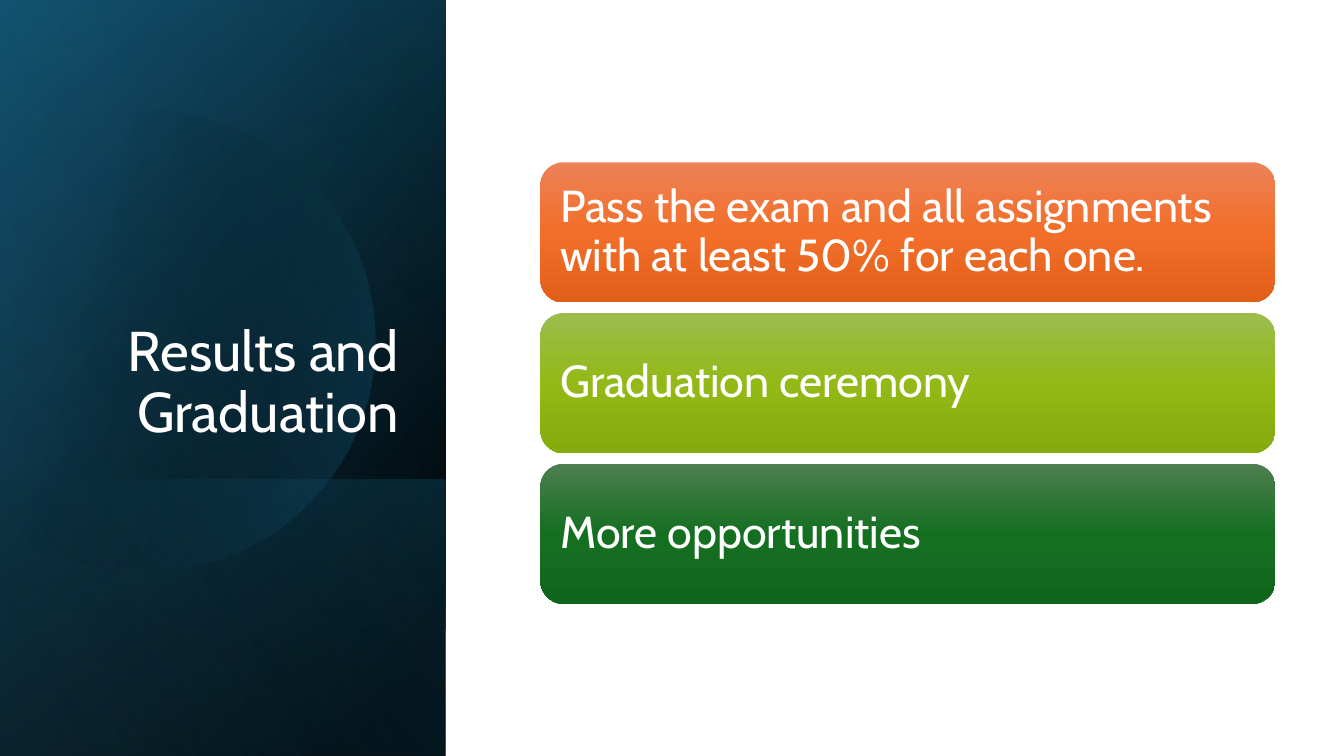
from lxml.etree import SubElement
from pptx import Presentation
from pptx.dml.color import RGBColor
from pptx.enum.shapes import MSO_SHAPE
from pptx.enum.text import MSO_ANCHOR, MSO_AUTO_SIZE, PP_ALIGN
from pptx.oxml.ns import qn
from pptx.util import Inches, Pt


def color(value):
    return RGBColor.from_string(value)


def write_text(frame, text, size=32, fill="FFFFFF", font="Cabin",
               align=PP_ALIGN.LEFT, anchor=MSO_ANCHOR.MIDDLE):
    frame.word_wrap = True
    frame.auto_size = MSO_AUTO_SIZE.NONE
    frame.vertical_anchor = anchor
    para = frame.paragraphs[0]
    para.alignment = align
    para.line_spacing = 0.9
    span = para.add_run()
    span.text = text
    span.font.name = font
    span.font.size = Pt(size)
    span.font.color.rgb = color(fill)


def curve_points(start, first, second, end, steps=24):
    """Points along a cubic curve, without its start."""
    for step in range(1, steps + 1):
        t = step / steps
        weights = ((1 - t) ** 3, 3 * t * (1 - t) ** 2, 3 * t * t * (1 - t), t ** 3)
        yield tuple(sum(weight * point[axis] for weight, point
                        in zip(weights, (start, first, second, end)))
                    for axis in (0, 1))


class SlideBuilder:
    def __init__(self, page):
        self.page = page
        self.shapes = page.shapes

    def paint(self, shape, stops, angle):
        """Gradient fill from (position, colour, opacity) in percent."""
        shape.shadow.inherit = False
        shape.line.fill.background()
        shape.fill.gradient()
        gradient = shape._element.spPr.find(qn("a:gradFill"))
        stop_list = gradient.find(qn("a:gsLst"))
        for old_stop in list(stop_list):
            stop_list.remove(old_stop)
        for position, value, opacity in stops:
            stop = SubElement(stop_list, qn("a:gs"), pos=str(position * 1000))
            tone = SubElement(stop, qn("a:srgbClr"), val=value)
            if opacity < 100:
                SubElement(tone, qn("a:alpha"), val=str(opacity * 1000))
        gradient.find(qn("a:lin")).set("ang", str(angle * 60000))

    def panel(self, top, height, stops, angle):
        """Side panel: a mirrored rectangle turned a quarter."""
        left = (PANEL_WIDTH - height) / 2
        turned_top = top + (height - PANEL_WIDTH) / 2
        panel = self.shapes.add_shape(
            MSO_SHAPE.RECTANGLE, Inches(left), Inches(turned_top),
            Inches(height), Inches(PANEL_WIDTH))
        panel.rotation = 90
        panel._element.spPr.find(qn("a:xfrm")).set("flipH", "1")
        self.paint(panel, stops, angle)

    def outline(self, points, stops, angle):
        points = [(Inches(x), Inches(y)) for x, y in points]
        builder = self.shapes.build_freeform(*points[0])
        builder.add_line_segments(points[1:], close=True)
        self.paint(builder.convert_to_shape(), stops, angle)

    def title(self, text, left, top, width, height):
        title = self.shapes.title
        title.left, title.top = Inches(left), Inches(top)
        title.width, title.height = Inches(width), Inches(height)
        write_text(title.text_frame, text, size=40,
                   align=PP_ALIGN.RIGHT, anchor=MSO_ANCHOR.BOTTOM)
        # Bring the title in front of the panels
        self.shapes._spTree.append(title._element)

    def card(self, text, top, tones):
        card = self.shapes.add_shape(
            MSO_SHAPE.ROUNDED_RECTANGLE, Inches(5.36), Inches(top),
            Inches(7.29), Inches(1.39))
        self.paint(card, [(position, tone, 100) for position, tone
                          in zip((0, 50, 100), tones)], 90)
        frame = card.text_frame
        frame.margin_left = frame.margin_right = Inches(0.13)
        frame.margin_top = frame.margin_bottom = Inches(0.13)
        write_text(frame, text)


PANEL_WIDTH = 4.42
PAGE_HEIGHT = 7.5
# Partial disc: start point, then curves as two handles and an end
DISC_START = (1.49, 1.1)
DISC_CURVES = [
    ((2.46, 1.12), (3.35, 1.77), (3.63, 2.75)),
    ((3.98, 3.97), (3.28, 5.23), (2.07, 5.58)),
    ((1.31, 5.8), (0.53, 5.61), (-0.03, 5.14)),
]
DISC_EDGE = [(-0.15, 5.03), (-0.15, 1.75), (0, 1.61)]
DISC_CLOSING = [
    ((0.23, 1.42), (0.5, 1.28), (0.8, 1.19)),
    ((1.03, 1.13), (1.26, 1.1), DISC_START),
]
CARDS = [
    ("Pass the exam and all assignments with at least 50% for each one.",
     ("ED8257", "F26E29", "E25F1A")),
    ("Graduation ceremony", ("9CBD4E", "92B916", "85AB0D")),
    ("More opportunities", ("4D7E50", "156F21", "0F661B")),
]


def disc_points():
    points = [DISC_START]
    for curve in DISC_CURVES:
        points.extend(curve_points(points[-1], *curve))
    points.extend(DISC_EDGE)
    for curve in DISC_CLOSING:
        points.extend(curve_points(points[-1], *curve))
    return points


def main():
    deck = Presentation()
    deck.slide_width, deck.slide_height = Inches(13.33), Inches(PAGE_HEIGHT)
    slide = SlideBuilder(deck.slides.add_slide(deck.slide_layouts[5]))

    # Layered side panel
    slide.panel(0, PAGE_HEIGHT, [(8, "000000", 100), (100, "104862", 100)], 50)
    slide.panel(0, PAGE_HEIGHT, [(0, "000000", 0), (99, "156082", 46)], 30)
    slide.panel(4.76, 2.74, [(2, "156082", 29), (100, "000000", 30)], 130)
    slide.outline(disc_points(), [(29, "000000", 0), (100, "156082", 43)], 14)
    slide.panel(0, PAGE_HEIGHT, [(0, "000000", 0), (99, "46B1E1", 11)], 120)

    # Title
    slide.title("Results and Graduation", 0.64, 1.84, 3.41, 2.62)

    # Cards
    for index, (text, tones) in enumerate(CARDS):
        slide.card(text, 1.61 + index * 1.495, tones)

    deck.save("out.pptx")


if __name__ == "__main__":
    main()
